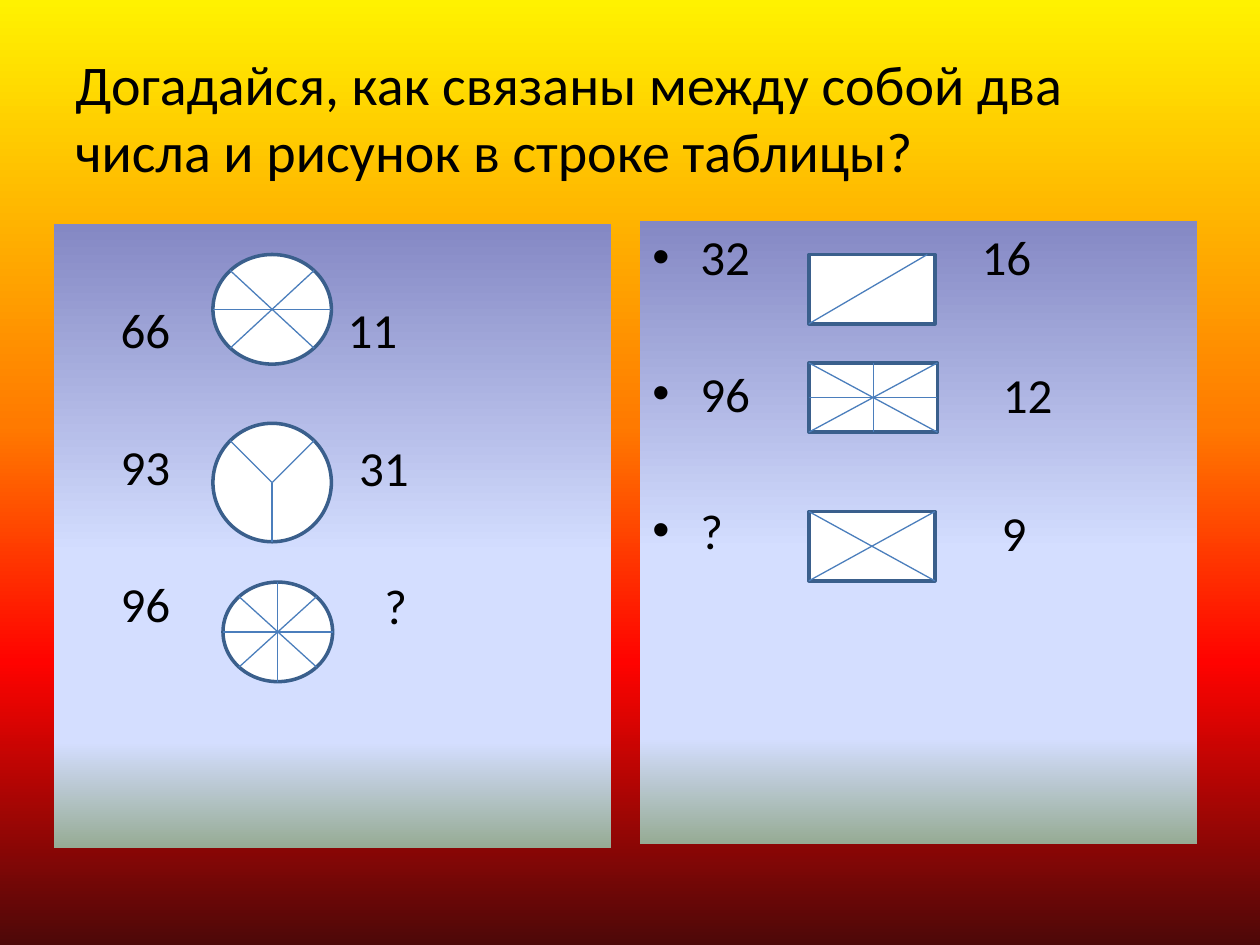
from dataclasses import dataclass
from typing import NamedTuple

import pptx
import pptx.dml.color
import pptx.enum.shapes
import pptx.enum.text
import pptx.oxml
import pptx.oxml.ns
import pptx.util
from lxml import etree

COLS, ROWS = 100, 75
WIDE, HIGH = pptx.util.Inches(10), pptx.util.Inches(7.5)
KIND = pptx.enum.shapes.MSO_SHAPE
ANCHOR = pptx.enum.text.MSO_ANCHOR
qn = pptx.oxml.ns.qn


@dataclass(frozen=True)
class Theme:
    font: str = "Calibri"
    ink: str = "000000"
    paper: str = "FFFFFF"
    edge: str = "3A5F8C"
    ray: str = "4B7EBC"
    title: int = 32
    body: int = 28
    edge_pt: float = 2
    ray_pt: float = 0.75
    sky: tuple = ((0, "FFF200"), (45, "FF7A00"), (70, "FF0300"), (100, "4D0808"))
    panel: tuple = ((0, "8488C4"), (53, "D4DEFF"), (83, "D4DEFF"), (100, "96AB94"))


THEME = Theme()


class Box(NamedTuple):
    """Left, top, width and height in grid columns and rows."""
    x: float
    y: float
    w: float
    h: float


class Row(NamedTuple):
    first: str
    last: str
    col: float


class Panel(NamedTuple):
    box: Box
    top: float
    indent: float
    bullet: bool
    rows: tuple


class Figure(NamedTuple):
    """Rays run between points measured in half sizes from the centre."""
    kind: int
    box: Box
    rays: tuple


def cross(k: float) -> tuple:
    return ((-k, -k, k, k), (k, -k, -k, k))


FLAT, TALL = (-1, 0, 1, 0), (0, -1, 0, 1)
DIAG = 0.71
STEP = 10.95  # rows from one line of numbers to the next
LINE = 4.75   # rows one line of numbers takes

PANELS = (
    Panel(Box(4.3, 17.8, 44.2, 49.5), 6, 4.3, False,
          (Row("66", "11", 27.6), Row("93", "31", 28.5), Row("96", "?", 30.5))),
    Panel(Box(50.8, 17.5, 44.2, 49.5), 0.5, 3.8, True,
          (Row("32", "16", 77.9), Row("96", "12", 79.6), Row("?", "9", 79.5))),
)

FIGURES = (
    Figure(KIND.OVAL, Box(16.9, 20.2, 9.4, 8.7), (FLAT, *cross(DIAG))),
    Figure(KIND.OVAL, Box(16.9, 33.6, 9.4, 9.4),
           ((-DIAG, -DIAG, 0, 0), (0, 0, DIAG, -DIAG), (0, 0, 0, 1))),
    Figure(KIND.OVAL, Box(17.7, 46.2, 8.7, 7.9), (FLAT, TALL, *cross(DIAG))),
    Figure(KIND.RECTANGLE, Box(64.2, 20.2, 10, 5.5), ((0.88, -1, -1, 1),)),
    Figure(KIND.RECTANGLE, Box(64.2, 28.8, 10.2, 5.5), (FLAT, TALL, *cross(1))),
    Figure(KIND.RECTANGLE, Box(64.2, 40.6, 10, 5.5), cross(1)),
)


def across(n: float) -> int:
    return round(WIDE * n / COLS)


def down(n: float) -> int:
    return round(HIGH * n / ROWS)


def place(box: Box) -> tuple:
    return across(box.x), down(box.y), across(box.w), down(box.h)


def rgb(code: str):
    return pptx.dml.color.RGBColor.from_string(code)


def blend(item, stops: tuple) -> None:
    """Fill a shape or background from top to bottom through all stops."""
    item.fill.gradient()
    item.fill.gradient_angle = 270


def set_stops(root, stops: tuple) -> None:
    """Swap the stops of the first gradient below root."""
    group = next(root.iter(qn("a:gsLst")))
    for old in list(group):
        group.remove(old)
    for at, code in stops:
        stop = etree.SubElement(group, qn("a:gs"), pos=str(at * 1000))
        etree.SubElement(stop, qn("a:srgbClr"), val=code)


def write(shape, lines: tuple, *, size: int, inset: tuple = (1, 0.5),
          top: float = 0, gap: float = 0, indent: float = 0,
          bullet: bool = False, anchor=ANCHOR.TOP) -> None:
    frame = shape.text_frame
    frame.word_wrap = True
    frame.vertical_anchor = anchor
    frame.margin_left = frame.margin_right = across(inset[0])
    frame.margin_top, frame.margin_bottom = down(top or inset[1]), down(inset[1])
    for i, line in enumerate(lines):
        para = frame.add_paragraph() if i else frame.paragraphs[0]
        para.alignment = pptx.enum.text.PP_ALIGN.LEFT
        para.space_before = pptx.util.Pt(gap if i else 0)
        run = para.add_run()
        run.text = line
        run.font.name, run.font.size = THEME.font, pptx.util.Pt(size)
        run.font.color.rgb = rgb(THEME.ink)
        props = para._p.get_or_add_pPr()
        props.set("marL", str(across(indent)))
        if bullet:
            props.set("indent", str(-across(indent)))
            etree.SubElement(props, qn("a:buFont"), typeface="Arial")
            etree.SubElement(props, qn("a:buChar"), char="•")


def draw_panel(slide, panel: Panel) -> None:
    shape = slide.shapes.add_shape(KIND.RECTANGLE, *place(panel.box))
    shape.shadow.inherit = False
    blend(shape, THEME.panel)
    set_stops(shape.element, THEME.panel)
    shape.line.fill.background()
    gap = (STEP - LINE) / ROWS * HIGH / pptx.util.Pt(1)
    write(shape, tuple(row.first for row in panel.rows), size=THEME.body,
          top=panel.top, gap=round(gap, 1), indent=panel.indent,
          bullet=panel.bullet)
    for i, row in enumerate(panel.rows):
        spot = Box(row.col, panel.box.y + panel.top + i * STEP, 7, LINE)
        label = slide.shapes.add_textbox(*place(spot))
        write(label, (row.last,), size=THEME.body, inset=(0, 0))


def draw_figure(slide, fig: Figure) -> None:
    shape = slide.shapes.add_shape(fig.kind, *place(fig.box))
    shape.shadow.inherit = False
    shape.fill.solid()
    shape.fill.fore_color.rgb = rgb(THEME.paper)
    shape.line.color.rgb = rgb(THEME.edge)
    shape.line.width = pptx.util.Pt(THEME.edge_pt)
    x, y, w, h = fig.box
    for a, b, c, d in fig.rays:
        ray = slide.shapes.add_connector(
            pptx.enum.shapes.MSO_CONNECTOR.STRAIGHT,
            across(x + w * (1 + a) / 2), down(y + h * (1 + b) / 2),
            across(x + w * (1 + c) / 2), down(y + h * (1 + d) / 2))
        ray.line.color.rgb = rgb(THEME.ray)
        ray.line.width = pptx.util.Pt(THEME.ray_pt)
        etree.SubElement(ray.element.spPr, qn("a:effectLst"))


def main() -> None:
    deck = pptx.Presentation()
    deck.slide_width, deck.slide_height = WIDE, HIGH
    slide = deck.slides.add_slide(deck.slide_layouts[6])
    blend(slide.background, THEME.sky)
    set_stops(slide.element, THEME.sky)
    title = slide.shapes.add_textbox(*place(Box(5, 3, 90, 12.5)))
    write(title, ("Догадайся, как связаны между собой два числа "
                  "и рисунок в строке таблицы?",),
          size=THEME.title, anchor=ANCHOR.MIDDLE)
    for panel in PANELS:
        draw_panel(slide, panel)
    for fig in FIGURES:
        draw_figure(slide, fig)
    deck.save("out.pptx")


if __name__ == "__main__":
    main()
